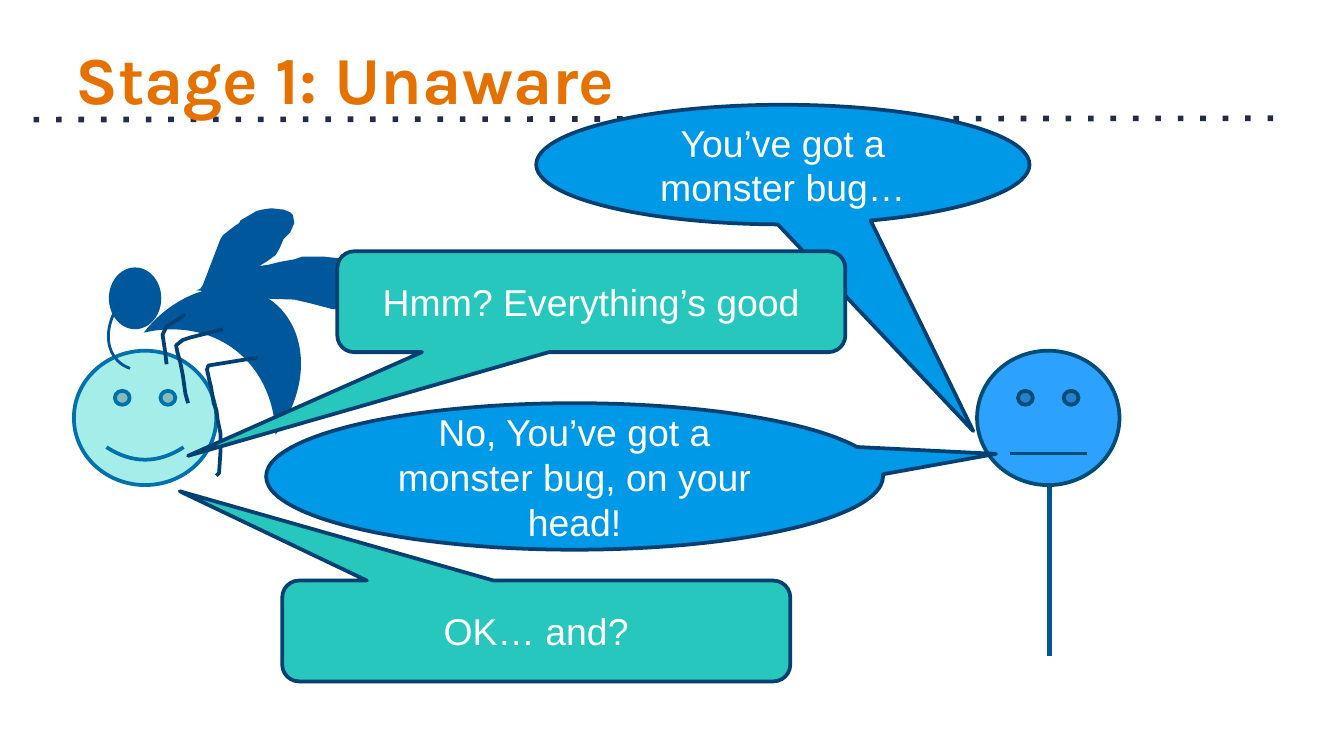
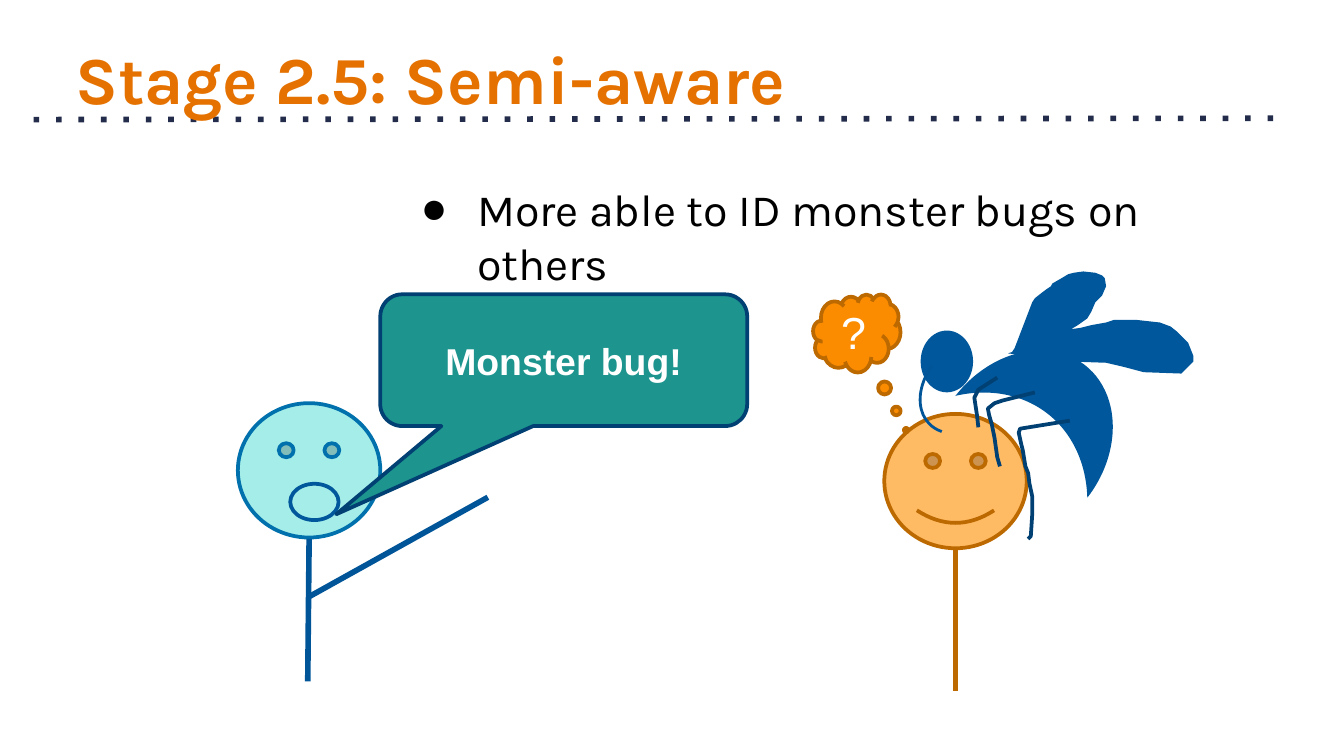
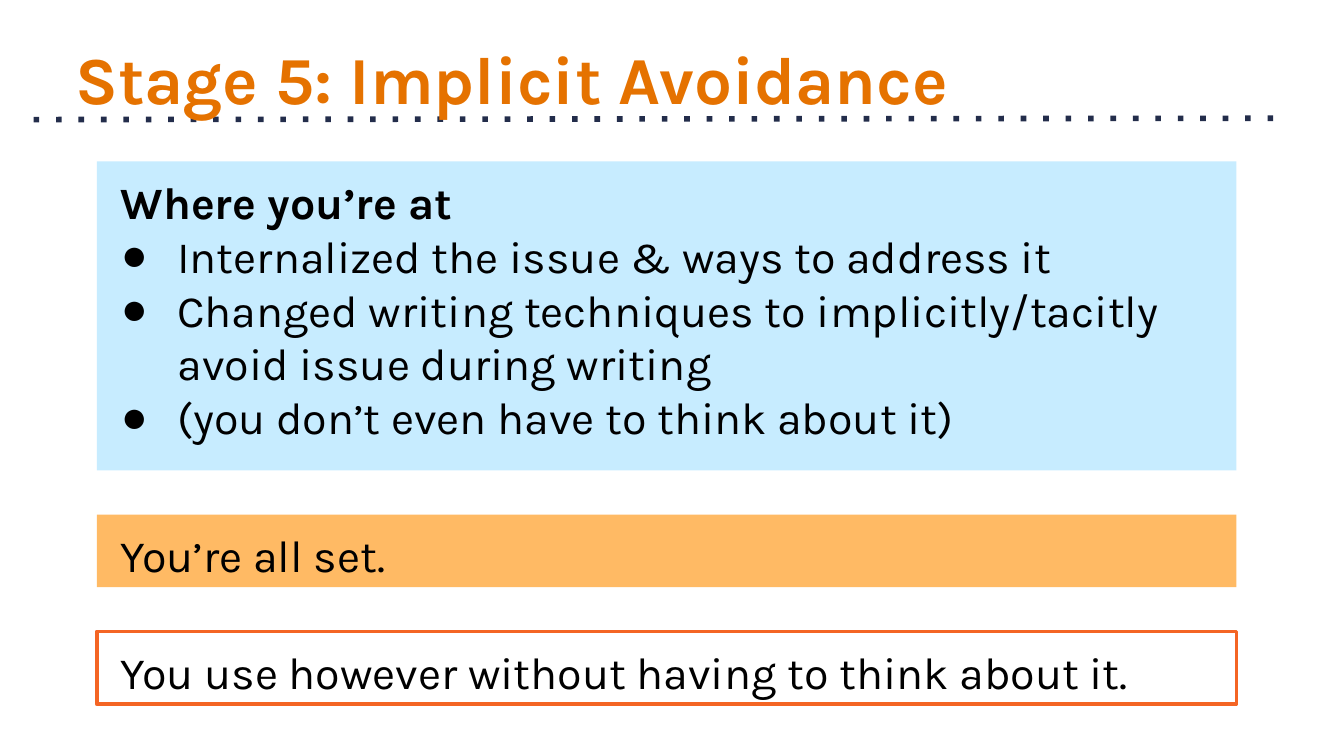
import lxml.etree
import pptx
import pptx.dml.color
import pptx.enum.shapes
import pptx.enum.text
import pptx.oxml.ns
import pptx.util

PX = 9144
RGB = pptx.dml.color.RGBColor
SHAPE = pptx.enum.shapes.MSO_SHAPE
ALIGN = pptx.enum.text.PP_ALIGN
ANCHOR = pptx.enum.text.MSO_ANCHOR
qn = pptx.oxml.ns.qn

BLACK = RGB(0x00, 0x00, 0x00)
WHITE = RGB(0xFF, 0xFF, 0xFF)
TITLE_ORANGE = RGB(0xE5, 0x72, 0x00)
RULE_NAVY = RGB(0x23, 0x2D, 0x4B)
BUG_BLUE = RGB(0x01, 0x57, 0x9B)
LIMB_BLUE = RGB(0x00, 0x55, 0x99)
OUTLINE_NAVY = RGB(0x01, 0x40, 0x73)
AQUA = RGB(0xA4, 0xED, 0xE9)
AQUA_EDGE = RGB(0x00, 0x71, 0xAC)
SKY = RGB(0x2C, 0xA1, 0xFE)
SKY_EDGE = RGB(0x00, 0x4C, 0x74)
PEACH = RGB(0xFF, 0xBA, 0x64)
PEACH_EDGE = RGB(0xBC, 0x69, 0x00)
SPEECH_BLUE = RGB(0x00, 0x99, 0xE8)
SPEECH_TEAL = RGB(0x27, 0xC7, 0xBD)
DARK_TEAL = RGB(0x1D, 0x95, 0x8E)
THOUGHT_ORANGE = RGB(0xFB, 0x8C, 0x00)
PALE_BLUE = RGB(0xC7, 0xEC, 0xFF)
BAR_ORANGE = RGB(0xF4, 0x65, 0x24)


def paint(shape, fill, edge=None, weight=2):
    shape.shadow.inherit = False
    if fill is None:
        shape.fill.background()
    else:
        shape.fill.solid()
        shape.fill.fore_color.rgb = fill
    if edge is None:
        shape.line.fill.background()
    else:
        shape.line.color.rgb = edge
        shape.line.width = pptx.util.Pt(weight)


def write(paragraph, text, size, color=BLACK, bold=False, font="Karla", indent=None, bullet=False):
    paragraph.space_before = pptx.util.Pt(0)
    paragraph.alignment = ALIGN.LEFT if font == "Karla" else ALIGN.CENTER
    if indent is not None:
        properties = paragraph._p.get_or_add_pPr()
        properties.set("marL", str(indent * PX))
        properties.set("indent", str(-42 * PX if bullet else 0))
        if bullet:
            tint = lxml.etree.SubElement(properties, qn("a:buClr"))
            lxml.etree.SubElement(tint, qn("a:srgbClr"), val=str(BLACK))
            lxml.etree.SubElement(properties, qn("a:buChar"), char="●")
        else:
            lxml.etree.SubElement(properties, qn("a:buNone"))
    run = paragraph.add_run()
    run.text = text
    run.font.name = font
    run.font.size = pptx.util.Pt(size)
    run.font.bold = bold
    run.font.color.rgb = color


prs = pptx.Presentation()
prs.slide_width = 1000 * PX
prs.slide_height = prs.slide_width * 9 // 16

slides = []
for heading, layout in [
    ("Stage 1: Unaware", 5),
    ("Stage 2.5: Semi-aware", 1),
    ("Stage 5: Implicit Avoidance", 1),
]:
    slide = prs.slides.add_slide(prs.slide_layouts[layout])
    title = slide.shapes.title
    title.left, title.top, title.width, title.height = 46 * PX, 18 * PX, 909 * PX, 69 * PX
    write(title.text_frame.paragraphs[0], heading, 36, TITLE_ORANGE, True)
    slides.append(slide)
unaware, semi_aware, avoidance = slides

for slide, left, top, smile, skin, edge in [
    (unaware, 55, 261, 0.047, AQUA, AQUA_EDGE),
    (unaware, 727, 261, 0, SKY, SKY_EDGE),
    (semi_aware, 658, 308, 0.047, PEACH, PEACH_EDGE),
    (semi_aware, 177, 300, -0.018, AQUA, AQUA_EDGE),
]:
    head = slide.shapes.add_shape(SHAPE.SMILEY_FACE, left * PX, top * PX, 106 * PX, 100 * PX)
    head.adjustments[0] = smile
    paint(head, skin, edge)

wings = [
    (71, 62), (84, 28), (86, 25), (91, 21), (95, 18), (98, 16), (99, 14), (106, 10),
    (111, 7), (115, 6), (122, 5), (131, 6), (136, 8), (138, 10), (139, 16), (136, 23),
    (131, 28), (128, 35), (125, 40), (118, 45), (113, 48), (120, 47), (128, 45),
    (139, 43), (145, 41), (161, 41), (179, 43), (187, 46), (192, 50), (200, 58),
    (204, 68), (204, 72), (199, 77), (195, 81), (167, 80), (152, 76), (139, 73),
    (110, 72), (101, 70), (93, 68), (75, 67), (66, 66), (69, 65),
]
hind_leg = [
    (112, 116), (75, 122), (74, 125), (76, 134), (77, 138), (79, 150), (81, 155),
    (82, 163), (84, 172), (84, 187), (83, 202), (81, 204),
]
middle_leg = [
    (86, 95), (62, 101), (56, 103), (51, 107), (52, 112), (54, 119), (56, 129),
    (58, 143), (60, 150),
]
front_leg = [(58, 84), (44, 93), (41, 99), (43, 112), (44, 121)]

for slide, bug_left, bug_top in [(unaware, 80, 150), (semi_aware, 684, 197)]:
    for preset, left, top, width, height, turn, bends, fill, edge in [
        (SHAPE.MOON, 61, 43, 77, 124, 127.7, [0.592], BUG_BLUE, None),
        (SHAPE.OVAL, 1, 49, 39, 46, 0, [], BUG_BLUE, None),
        (SHAPE.ARC, 7, 47, 61, 84, 225.9, [152.854, 204.291], None, LIMB_BLUE),
    ]:
        part = slide.shapes.add_shape(
            preset, (bug_left + left) * PX, (bug_top + top) * PX, width * PX, height * PX)
        part.rotation = turn
        for index, bend in enumerate(bends):
            part.adjustments[index] = bend
        paint(part, fill, edge, 1.5)
    for points, fill, edge in [
        (wings, BUG_BLUE, None),
        (hind_leg, None, OUTLINE_NAVY),
        (middle_leg, None, OUTLINE_NAVY),
        (front_leg, None, OUTLINE_NAVY),
    ]:
        placed = [(bug_left + x, bug_top + y) for x, y in points]
        outline = slide.shapes.build_freeform(*placed[0], scale=PX)
        outline.add_line_segments(placed[1:], close=points is wings)
        paint(outline.convert_to_shape(), fill, edge)

for preset, left, top, width, height, fill, edge in [
    (SHAPE.ROUNDED_RECTANGLE, 199, 364, 67, 19, AQUA, None),
    (SHAPE.OVAL, 216, 360, 36, 27, None, BUG_BLUE),
]:
    mouth = semi_aware.shapes.add_shape(preset, left * PX, top * PX, width * PX, height * PX)
    paint(mouth, fill, edge)

for slide, x1, y1, x2, y2, color in [
    (unaware, 781, 362, 781, 488, LIMB_BLUE),
    (semi_aware, 711, 408, 711, 514, PEACH_EDGE),
    (semi_aware, 230, 401, 229, 507, LIMB_BLUE),
    (semi_aware, 230, 444, 363, 370, LIMB_BLUE),
    (avoidance, 25, 89, 955, 88, RULE_NAVY),
]:
    stroke = slide.shapes.add_connector(
        pptx.enum.shapes.MSO_CONNECTOR.STRAIGHT, x1 * PX, y1 * PX, x2 * PX, y2 * PX)
    stroke.line.color.rgb = color
    stroke.line.width = pptx.util.Pt(3)
    lxml.etree.SubElement(stroke.element.spPr, qn("a:effectLst"))
title_rule = stroke.element
lxml.etree.SubElement(title_rule.spPr.find(qn("a:ln")), qn("a:prstDash"), val="dot")
prs.slide_master.shapes.element.append(title_rule)

ELLIPSE = SHAPE.OVAL_CALLOUT
ROUNDED = SHAPE.ROUNDED_RECTANGULAR_CALLOUT
for slide, preset, left, top, width, height, tail, fill, edge, words, size, bold in [
    (unaware, ELLIPSE, 399, 78, 367, 89, (0.386, 2.227), SPEECH_BLUE, OUTLINE_NAVY,
     "You’ve got a monster bug…", 20, False),
    (unaware, ROUNDED, 251, 187, 378, 75, (-0.794, 1.529), SPEECH_TEAL, OUTLINE_NAVY,
     "Hmm? Everything’s good", 20, False),
    (unaware, ELLIPSE, 198, 300, 459, 109, (0.683, -0.154), SPEECH_BLUE, OUTLINE_NAVY,
     "No, You’ve got a monster bug, on your head!", 20, False),
    (unaware, ROUNDED, 210, 432, 378, 75, (-0.702, -1.387), SPEECH_TEAL, OUTLINE_NAVY,
     "OK… and?", 20, False),
    (semi_aware, ROUNDED, 283, 219, 273, 98, (-0.62, 1.17), DARK_TEAL, OUTLINE_NAVY,
     "Monster bug!", 20, True),
    (semi_aware, SHAPE.CLOUD_CALLOUT, 605, 219, 65, 58, (0.564, 1.242), THOUGHT_ORANGE,
     PEACH_EDGE, "?", 24, False),
]:
    speech = slide.shapes.add_shape(preset, left * PX, top * PX, width * PX, height * PX)
    speech.adjustments[0], speech.adjustments[1] = tail
    paint(speech, fill, edge)
    speech.text_frame.word_wrap = True
    speech.text_frame.vertical_anchor = ANCHOR.MIDDLE
    write(speech.text_frame.paragraphs[0], words, size, WHITE, bold, "Arial")

symptoms = semi_aware.placeholders[1]
symptoms.left, symptoms.top, symptoms.width, symptoms.height = 295 * PX, 125 * PX, 620 * PX, 180 * PX
write(symptoms.text_frame.paragraphs[0], "More able to ID monster bugs on others", 24,
      indent=50, bullet=True)

status = avoidance.placeholders[1]
status.left, status.top, status.width, status.height = 72 * PX, 120 * PX, 848 * PX, 230 * PX
status.fill.solid()
status.fill.fore_color.rgb = PALE_BLUE
write(status.text_frame.paragraphs[0], "Where you’re at", 24, bold=True, indent=8)
for point in [
    "Internalized the issue & ways to address it",
    "Changed writing techniques to implicitly/tacitly avoid issue during writing",
    "(you don’t even have to think about it)",
]:
    write(status.text_frame.add_paragraph(), point, 24, indent=50, bullet=True)

karla_frames = [slide.shapes.title.text_frame for slide in slides]
karla_frames += [symptoms.text_frame, status.text_frame]
for top, fill, edge, advice in [
    (383, PEACH, None, "You’re all set."),
    (470, WHITE, BAR_ORANGE, "You use however without having to think about it."),
]:
    bar = avoidance.shapes.add_shape(SHAPE.RECTANGLE, 72 * PX, top * PX, 848 * PX, 54 * PX)
    paint(bar, fill, edge)
    write(bar.text_frame.paragraphs[0], advice, 24, indent=8)
    karla_frames.append(bar.text_frame)

for frame in karla_frames:
    frame.word_wrap = True
    frame.auto_size = pptx.enum.text.MSO_AUTO_SIZE.NONE
    frame.vertical_anchor = ANCHOR.TOP
    frame.margin_left = frame.margin_right = 10 * PX
    frame.margin_top = frame.margin_bottom = 10 * PX

prs.save("out.pptx")
